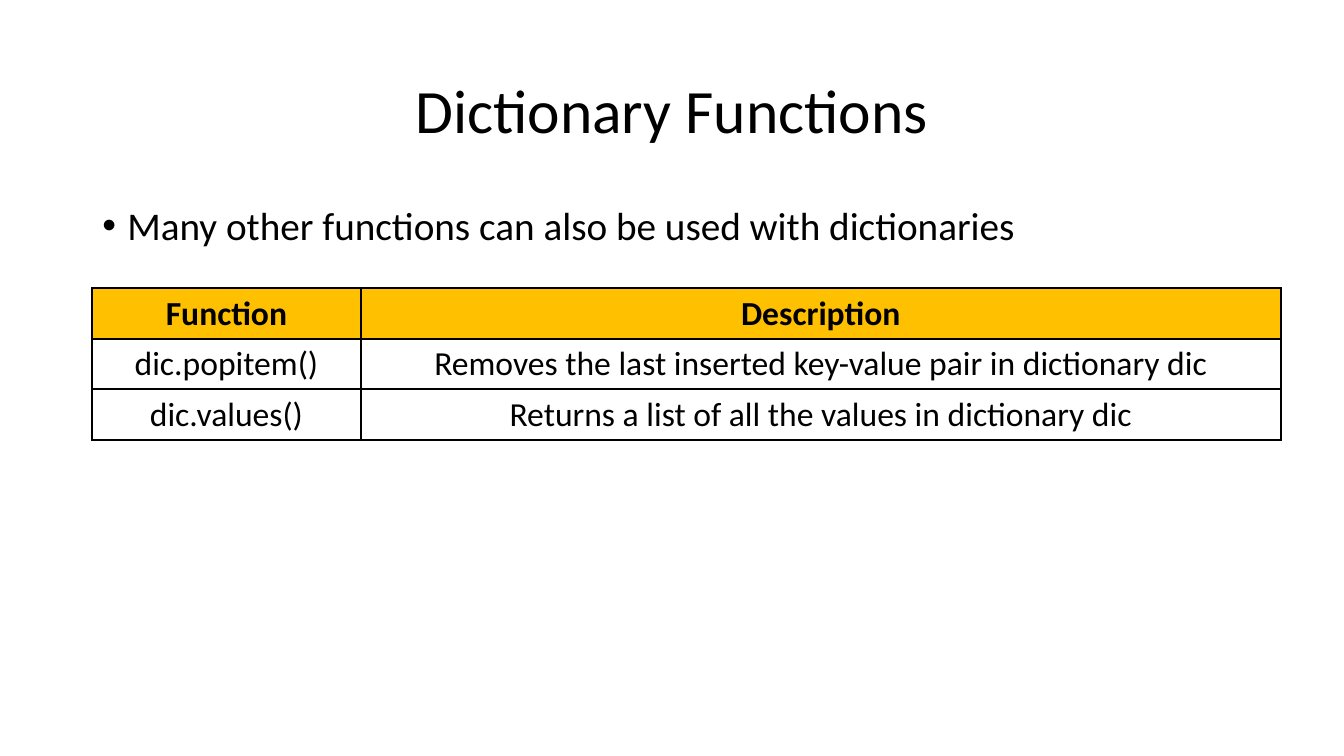
from lxml import etree
from pptx import Presentation
from pptx import util as u
from pptx.dml.color import RGBColor
from pptx.enum import text
from pptx.oxml.ns import qn


def color(value):
    return RGBColor.from_string(value)


class SlideBuilder:
    font = "Calibri"
    ink = "000000"
    header_fill = "FFC000"
    body_fill = "FFFFFF"
    border_width = 1.5

    def __init__(self, deck):
        self.slide = deck.slides.add_slide(deck.slide_layouts[5])

    def set_text(self, frame, words, size, align, bold=False):
        frame.text = words
        para = frame.paragraphs[0]
        para.alignment = align
        para.font.name = self.font
        para.font.size = u.Pt(size)
        para.font.bold = bold
        para.font.color.rgb = color(self.ink)
        return para

    def title(self, words, left, top, width, height):
        box = self.slide.shapes.title
        box.left, box.top = u.Pt(left), u.Pt(top)
        box.width, box.height = u.Pt(width), u.Pt(height)
        frame = box.text_frame
        frame.auto_size = text.MSO_AUTO_SIZE.NONE
        frame.vertical_anchor = text.MSO_ANCHOR.MIDDLE
        para = self.set_text(frame, words, 44, text.PP_ALIGN.CENTER)
        para.line_spacing = 0.9

    def bullet(self, words, left, top, width, height):
        box = self.slide.shapes.add_textbox(u.Pt(left), u.Pt(top), u.Pt(width), u.Pt(height))
        box.text_frame.word_wrap = True
        para = self.set_text(box.text_frame, words, 28, text.PP_ALIGN.LEFT)
        para.line_spacing = 0.9
        para.space_before = u.Pt(10)
        properties = para._p.get_or_add_pPr()
        properties.set("marL", str(u.Pt(18)))
        properties.set("indent", str(u.Pt(-18)))
        marker_font = etree.Element(qn("a:buFont"), typeface="Arial")
        marker = etree.Element(qn("a:buChar"), char="•")
        spacing = properties.find(qn("a:spcBef"))
        spacing.addnext(marker_font)
        marker_font.addnext(marker)

    def borders(self, cell):
        properties = cell._tc.get_or_add_tcPr()
        for position, side in enumerate(("lnL", "lnR", "lnT", "lnB")):
            line = etree.Element(qn(f"a:{side}"), w=str(u.Pt(self.border_width)))
            fill = etree.SubElement(line, qn("a:solidFill"))
            etree.SubElement(fill, qn("a:srgbClr"), val=self.ink)
            properties.insert(position, line)

    def table(self, rows, left, top, widths, row_height):
        frame = self.slide.shapes.add_table(
            len(rows), len(widths), u.Pt(left), u.Pt(top),
            u.Pt(sum(widths)), u.Pt(row_height * len(rows)))
        grid = frame.table
        for column, width in zip(grid.columns, widths):
            column.width = u.Pt(width)
        for row_index, words in enumerate(rows):
            is_header = row_index == 0
            for column_index, entry in enumerate(words):
                cell = grid.cell(row_index, column_index)
                self.set_text(cell.text_frame, entry, 24, text.PP_ALIGN.CENTER, is_header)
                cell.fill.solid()
                cell.fill.fore_color.rgb = color(self.header_fill if is_header else self.body_fill)
                self.borders(cell)


def main():
    deck = Presentation()
    deck.slide_width, deck.slide_height = u.Pt(960), u.Pt(540)
    page = SlideBuilder(deck)
    page.title("Dictionary Functions", 66, 28.75, 828, 104.4)
    page.bullet("Many other functions can also be used with dictionaries", 66, 143.75, 828, 342.6)
    page.table(
        [
            ("Function", "Description"),
            ("dic.popitem()", "Removes the last inserted key-value pair in dictionary dic"),
            ("dic.values()", "Returns a list of all the values in dictionary dic"),
        ],
        66, 206, (191.6, 657.4), 36)
    deck.save("out.pptx")


if __name__ == "__main__":
    main()
